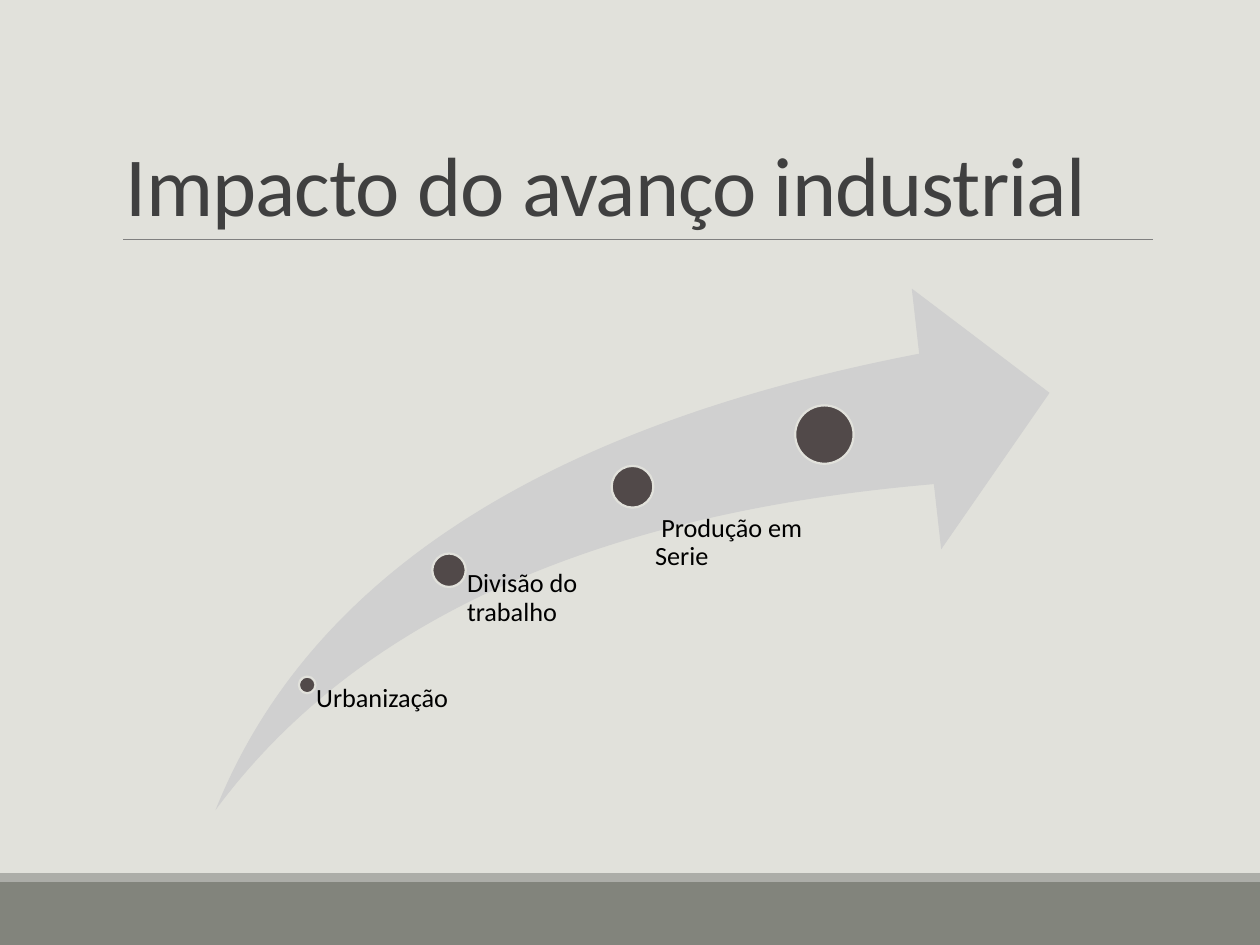
import pptx
import pptx.util
import pptx.dml.color
import pptx.enum.shapes
import pptx.enum.text
import pptx.oxml.ns
from dataclasses import dataclass

Inches = pptx.util.Inches
Pt = pptx.util.Pt
Kind = pptx.enum.shapes.MSO_SHAPE
Anchor = pptx.enum.text.MSO_ANCHOR


@dataclass(frozen=True)
class Theme:
    font: str = "Calibri"
    back: str = "E1E1DB"
    band: str = "82847C"
    strip: str = "ACADA8"
    rule: str = "808080"
    title: str = "404040"
    arrow: str = "D0D0D0"
    dot: str = "514949"
    label: str = "000000"
    big: float = 48
    small: float = 15


THEME = Theme()
WIDE, HIGH = 10, 7.5
ARROW = (1.71, 2.29, 6.62, 4.14)

# Centre x, centre y and diameter as shares of the arrow; label, its width,
# its drop below the dot's centre and its first-line indent in inches
STEPS = [
    (0.11, 0.76, 0.02, "Urbanização", 1.13, 0, 0),
    (0.28, 0.54, 0.04, "Divisão do trabalho", 1.39, 0, 0),
    (0.5, 0.38, 0.05, "Produção em Serie", 1.39, 0.22, 0.05),
    (0.73, 0.28, 0.07, "", 0, 0, 0),
]


def rgb(code):
    return pptx.dml.color.RGBColor.from_string(code)


def style(item, **values):
    for name, value in values.items():
        setattr(item, name, value)


def shape(slide, kind, box, fill, edge=None):
    item = slide.shapes.add_shape(kind, *map(Inches, box))
    item.shadow.inherit = False
    item.fill.solid()
    item.fill.fore_color.rgb = rgb(fill)
    if edge:
        item.line.color.rgb = rgb(edge)
        item.line.width = Pt(1.25)
    else:
        item.line.fill.background()
    return item


def text(slide, box, words, size, color, frame, para):
    item = slide.shapes.add_textbox(*map(Inches, box))
    body = item.text_frame
    style(body, word_wrap=True, **frame)
    line = body.paragraphs[0]
    style(line, **para)
    run = line.add_run()
    run.text = words
    style(run.font, name=THEME.font, size=Pt(size))
    run.font.color.rgb = rgb(color)
    return line


def rule(slide, left, right, y):
    kind = pptx.enum.shapes.MSO_CONNECTOR.STRAIGHT
    item = slide.shapes.add_connector(kind, *map(Inches, (left, y, right, y)))
    item.line.color.rgb = rgb(THEME.rule)
    item.line.width = Pt(0.5)
    props = item._element.spPr
    props.append(props.makeelement(pptx.oxml.ns.qn("a:effectLst"), {}))


def frame(slide):
    """Draw the background, the footer bands and the line under the title."""
    slide.background.fill.solid()
    slide.background.fill.fore_color.rgb = rgb(THEME.back)
    shape(slide, Kind.RECTANGLE, (0, 7, WIDE, 0.5), THEME.band)
    shape(slide, Kind.RECTANGLE, (0, 6.93, WIDE, 0.07), THEME.strip)
    rule(slide, 0.98, 9.15, 1.9)


def title(slide, words):
    line = text(slide, (0.9, 0.31, 8.25, 1.59), words, THEME.big, THEME.title,
                {"vertical_anchor": Anchor.BOTTOM}, {"line_spacing": 0.85})
    line.runs[0].font._element.set("spc", "-50")


def step(slide, x, y, share, words, width, drop, indent):
    """Draw a dot on the arrow and hang its label from the dot's centre."""
    left, top, wide, high = ARROW
    x, y, size = left + x * wide, top + y * high, share * wide
    shape(slide, Kind.OVAL, (x - size / 2, y - size / 2, size, size),
          THEME.dot, THEME.back)
    if not words:
        return
    inset = {"margin_left": Inches(size * 0.54), "margin_top": Inches(drop),
             "margin_right": 0, "margin_bottom": 0}
    line = text(slide, (x, y, width, top + high - y), words, THEME.small,
                THEME.label, inset, {"line_spacing": 0.9})
    if indent:
        line._p.get_or_add_pPr().set("indent", str(Inches(indent)))


def main():
    deck = pptx.Presentation()
    style(deck, slide_width=Inches(WIDE), slide_height=Inches(HIGH))
    slide = deck.slides.add_slide(deck.slide_layouts[6])
    frame(slide)
    title(slide, "Impacto do avanço industrial")
    arrow = shape(slide, Kind.SWOOSH_ARROW, ARROW, THEME.arrow)
    for spot in range(2):
        arrow.adjustments[spot] = 0.25
    for item in STEPS:
        step(slide, *item)
    deck.save("out.pptx")


if __name__ == "__main__":
    main()
